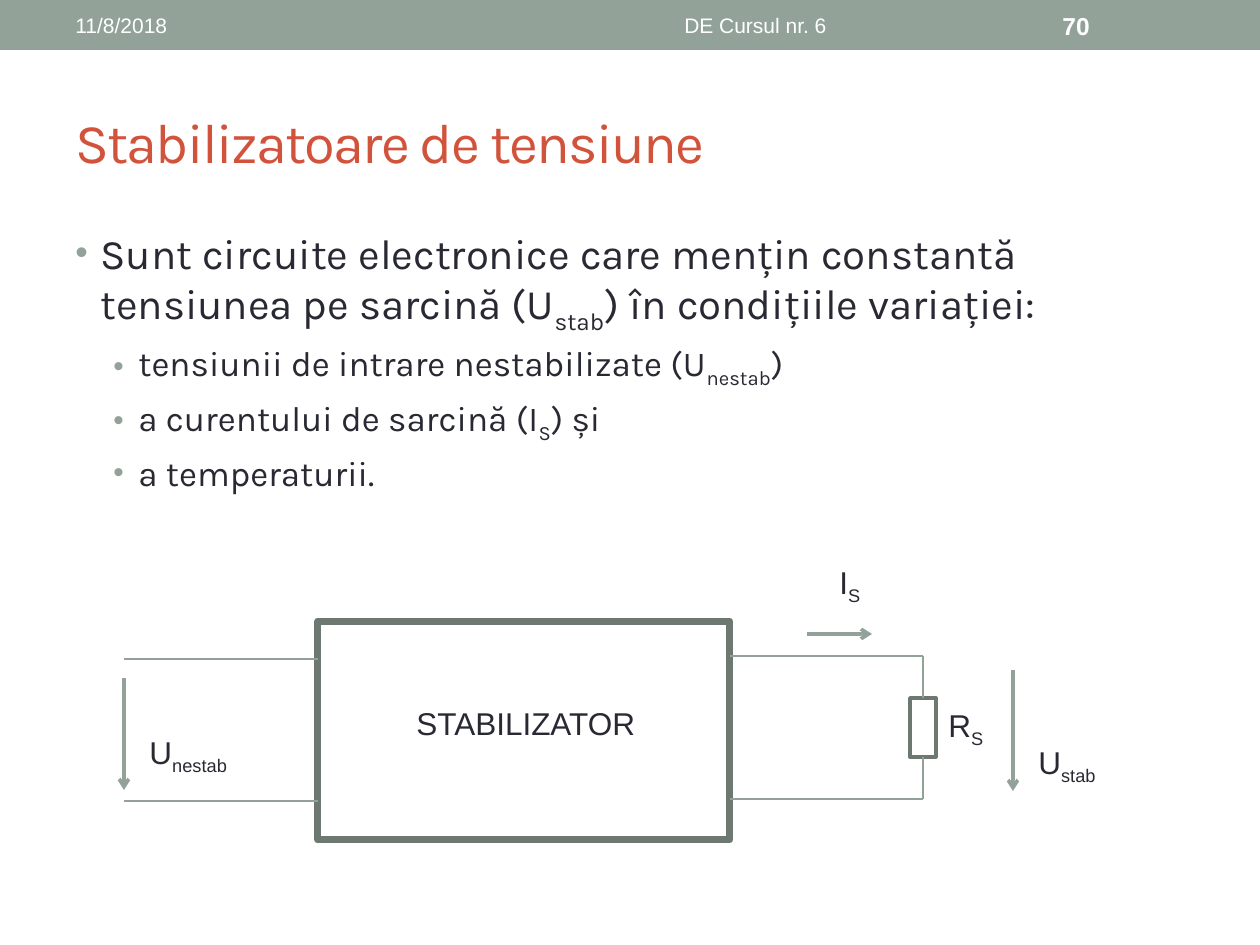
from lxml.etree import SubElement
from pptx import Presentation
from pptx.dml.color import RGBColor
from pptx.enum.shapes import MSO_CONNECTOR, MSO_SHAPE
from pptx.enum.text import MSO_ANCHOR, PP_ALIGN
from pptx.oxml.ns import qn
from pptx.util import Emu, Pt

SCALE = 914400 / 126
SAGE, DARK_SAGE, INK, RED, WHITE = "93A299", "6D7871", "292934", "D2533C", "FFFFFF"

HEADER = [
    ("11/8/2018", 63, 399, 12, False, PP_ALIGN.LEFT),
    ("DE Cursul nr. 6", 472, 567, 12, False, PP_ALIGN.CENTER),
    ("70", 1050, 147, 14, True, PP_ALIGN.LEFT),
]
TITLE = "Stabilizatoare de tensiune"
# A bar switches between normal text and subscript.
BULLETS = [
    (0, "Sunt circuite electronice care mențin constantă tensiunea pe sarcină (U|stab|) în condițiile variației:"),
    (1, "tensiunii de intrare nestabilizate (U|nestab|)"),
    (1, "a curentului de sarcină (I|S|) și"),
    (1, "a temperaturii."),
]
LEVELS = [(24, 25, 25), (20, 63, 25)]
LABELS = [
    ("STABILIZATOR", 404, 698, 247),
    ("U|nestab", 137, 727, 112),
    ("U|stab", 1026, 737, 88),
    ("R|S", 936, 700, 63),
    ("I|S", 827, 557, 48),
]
STABILIZER = (318, 621, 412, 219)
LOAD = (910, 698, 26, 59)
INPUT_X, INPUT_YS = 124, (659, 801)
OUTPUT_YS = (656, 799)
ARROWS = [(124, 678, 124, 790), (1013, 670, 1013, 791), (807, 634, 872, 634)]


def px(value):
    return Emu(round(value * SCALE))


def color(value):
    return RGBColor.from_string(value)


def add_rect(box, fill=None, line=None, width=0):
    rect = slide.shapes.add_shape(MSO_SHAPE.RECTANGLE, *map(px, box))
    rect.shadow.inherit = False
    if fill:
        rect.fill.solid()
        rect.fill.fore_color.rgb = color(fill)
    else:
        rect.fill.background()
    if line:
        rect.line.color.rgb = color(line)
        rect.line.width = Pt(width)
    else:
        rect.line.fill.background()
    return rect


def add_wire(ends, width=0.75, arrow=False):
    wire = slide.shapes.add_connector(MSO_CONNECTOR.STRAIGHT, *map(px, ends))
    wire.line.color.rgb = color(SAGE)
    wire.line.width = Pt(width)
    properties = wire._element.spPr
    if arrow:
        SubElement(properties.find(qn("a:ln")), qn("a:tailEnd"), type="arrow")
    SubElement(properties, qn("a:effectLst"))
    return wire


def add_frame(box, wrap=True, anchor=MSO_ANCHOR.TOP):
    frame = slide.shapes.add_textbox(*map(px, box)).text_frame
    frame.word_wrap = wrap
    frame.vertical_anchor = anchor
    return frame


def write(paragraph, text, size, font, ink, bold=False):
    paragraph.font.size = Pt(size)
    paragraph.font.name = font
    paragraph.font.bold = bold
    paragraph.font.color.rgb = color(ink)
    for index, part in enumerate(text.split("|")):
        run = paragraph.add_run()
        run.text = part
        if index % 2:
            run.font._element.set("baseline", "-25000")


def add_bullet(paragraph, left, hanging):
    properties = paragraph._p.get_or_add_pPr()
    properties.set("marL", str(px(left)))
    properties.set("indent", str(-px(hanging)))
    parts = [
        SubElement(properties, qn("a:spcBef")),
        SubElement(properties, qn("a:buClr")),
        SubElement(properties, qn("a:buSzPct"), val="85000"),
        SubElement(properties, qn("a:buFont"), typeface="Arial"),
        SubElement(properties, qn("a:buChar"), char="•"),
    ]
    SubElement(parts[0], qn("a:spcPct"), val="20000")
    SubElement(parts[1], qn("a:srgbClr"), val=SAGE)


presentation = Presentation()
presentation.slide_width, presentation.slide_height = px(1260), px(945)
slide = presentation.slides.add_slide(presentation.slide_layouts[6])

add_rect((0, 0, 1260, 50), fill=SAGE)
for text, left, width, size, bold, align in HEADER:
    paragraph = add_frame((left, 3, width, 45), anchor=MSO_ANCHOR.MIDDLE).paragraphs[0]
    paragraph.alignment = align
    write(paragraph, text, size, "Arial", WHITE, bold)

title = add_frame((63, 73, 1134, 136), anchor=MSO_ANCHOR.MIDDLE).paragraphs[0]
write(title, TITLE, 32, "Karla", RED)
title.runs[0].font._element.set("spc", "-100")

body = add_frame((63, 221, 1134, 672))
for index, (level, text) in enumerate(BULLETS):
    paragraph = body.add_paragraph() if index else body.paragraphs[0]
    size, left, hanging = LEVELS[level]
    paragraph.level = level
    add_bullet(paragraph, left, hanging)
    write(paragraph, text, size, "Karla", INK)

add_rect(STABILIZER, line=DARK_SAGE, width=4)
load = add_rect(LOAD, line=DARK_SAGE, width=2)

box_left, box_right = STABILIZER[0], STABILIZER[0] + STABILIZER[2]
load_x = LOAD[0] + LOAD[2] // 2
for y in INPUT_YS:
    add_wire((box_left, y, INPUT_X, y))
for y in OUTPUT_YS:
    add_wire((load_x, y, box_right, y))
add_wire((load_x, OUTPUT_YS[0], load_x, LOAD[1])).end_connect(load, 0)
add_wire((load_x, LOAD[1] + LOAD[3], load_x, OUTPUT_YS[1])).begin_connect(load, 2)
for ends in ARROWS:
    add_wire(ends, 2, arrow=True)

for text, left, top, width in LABELS:
    write(add_frame((left, top, width, 50), wrap=False).paragraphs[0], text, 18, "Arial", INK)

presentation.save("out.pptx")
